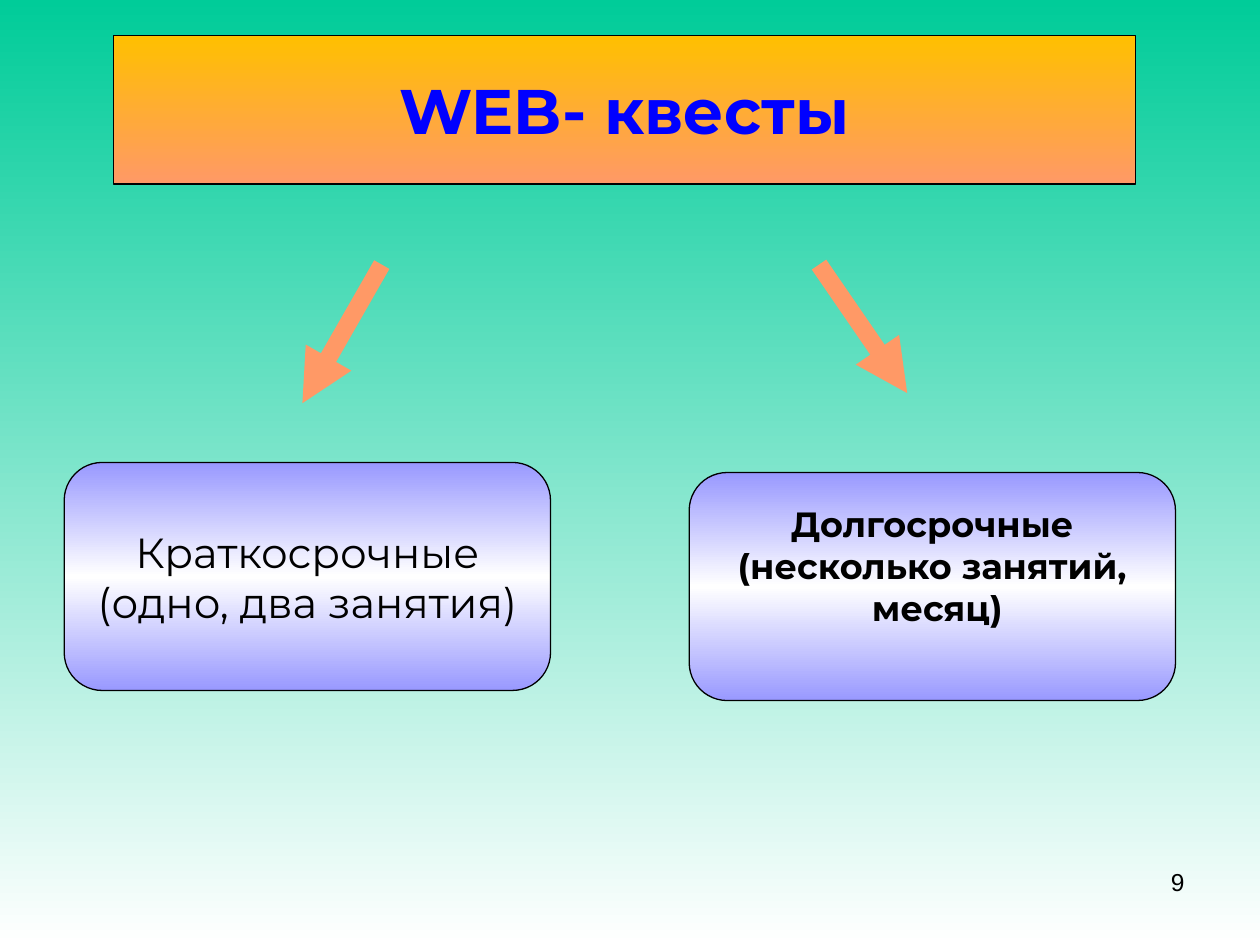
from copy import deepcopy
from dataclasses import dataclass

from pptx import Presentation
from pptx.dml.color import RGBColor
from pptx.enum.shapes import MSO_CONNECTOR, MSO_SHAPE
from pptx.enum.text import MSO_ANCHOR, MSO_AUTO_SIZE, PP_ALIGN
from pptx.oxml.ns import qn
from pptx.oxml.xmlchemy import OxmlElement
from pptx.util import Inches, Pt

# Content
TITLE = "WEB- квесты"
PAGE = "9"
QUESTS = [
    dict(lines=["Краткосрочные", "(одно, два занятия)"],
         at=(0.51, 3.67), size=24, bold=False, lift=0,
         arrow=(3.03, 2.1, 2.4, 3.2)),
    dict(lines=["Долгосрочные", "(несколько занятий,", " месяц)"],
         at=(5.47, 3.75), size=20, bold=True, lift=0.34,
         arrow=(6.5, 2.1, 7.2, 3.12)),
]
TITLE_BOX = (0.9, 0.28, 8.11, 1.18)
QUEST_SIZE = (3.86, 1.81)
PAGE_BOX = (7.17, 6.83, 2.33, 0.52)


@dataclass(frozen=True)
class Theme:
    font: str = "Montserrat"
    page_font: str = "Arial"
    background: tuple = ("00CC99", "FFFFFF")
    title_fill: tuple = ("FFC000", "FF9966")
    quest_fill: tuple = ("9999FF", "FFFFFF", "9999FF")
    title_ink: str = "0000FF"
    ink: str = "000000"
    arrow: str = "FF9966"
    title_size: int = 36
    page_size: int = 14
    outline: float = 0.75
    arrow_width: int = 10


T = Theme()


def rgb(value):
    return RGBColor.from_string(value)


def fill_gradient(fill, colors, element=None):
    """Vertical gradient with evenly spaced stops."""
    fill.gradient()
    fill.gradient_angle = 270
    if len(colors) > 2:
        stops = next(element.iter(qn("a:gsLst")))
        for _ in colors[2:]:
            stops.append(deepcopy(stops[0]))
    for i, (stop, color) in enumerate(zip(fill.gradient_stops, colors)):
        stop.position = i / (len(colors) - 1)
        stop.color.rgb = rgb(color)


def write(sp, lines, font, size, color, bold=False, align=PP_ALIGN.CENTER,
          anchor=MSO_ANCHOR.MIDDLE, wrap=False):
    tf = sp.text_frame
    tf.text = "\n".join(lines)
    tf.word_wrap = wrap
    tf.auto_size = MSO_AUTO_SIZE.NONE
    tf.vertical_anchor = anchor
    for p in tf.paragraphs:
        p.alignment = align
        for r in p.runs:
            r.font.name, r.font.size, r.font.bold = font, Pt(size), bold
            r.font.color.rgb = rgb(color)


def style_box(sp, colors):
    fill_gradient(sp.fill, colors, sp.element)
    sp.line.color.rgb = rgb(T.ink)
    sp.line.width = Pt(T.outline)


def add_arrow(s, ends):
    c = s.shapes.add_connector(MSO_CONNECTOR.STRAIGHT, *map(Inches, ends))
    c.line.color.rgb = rgb(T.arrow)
    c.line.width = Pt(T.arrow_width)
    tail = OxmlElement("a:tailEnd")
    tail.set("type", "triangle")
    c.line._get_or_add_ln().append(tail)
    c.element.spPr.append(OxmlElement("a:effectLst"))


def add_title(s):
    sp = s.shapes.title
    sp.left, sp.top, sp.width, sp.height = map(Inches, TITLE_BOX)
    geom = OxmlElement("a:prstGeom")
    geom.set("prst", "flowChartAlternateProcess")
    geom.append(OxmlElement("a:avLst"))
    sp.element.spPr.find(qn("a:xfrm")).addnext(geom)
    style_box(sp, T.title_fill)
    write(sp, [TITLE], T.font, T.title_size, T.title_ink, bold=True)


def add_quest(s, quest):
    sp = s.shapes.add_shape(MSO_SHAPE.FLOWCHART_ALTERNATE_PROCESS,
                            *map(Inches, quest["at"] + QUEST_SIZE))
    sp.shadow.inherit = False
    style_box(sp, T.quest_fill)
    write(sp, quest["lines"], T.font, quest["size"], T.ink, quest["bold"])
    sp.text_frame.margin_bottom = Inches(0.05 + quest["lift"])


def main():
    prs = Presentation()
    prs.slide_width, prs.slide_height = Inches(10), Inches(7.5)
    s = prs.slides.add_slide(prs.slide_layouts[5])
    fill_gradient(s.background.fill, T.background)

    # Title, then one arrow and box per kind of quest
    add_title(s)
    for quest in QUESTS:
        add_arrow(s, quest["arrow"])
        add_quest(s, quest)

    # Page number
    page = s.shapes.add_textbox(*map(Inches, PAGE_BOX))
    write(page, [PAGE], T.page_font, T.page_size, T.ink,
          align=PP_ALIGN.RIGHT, anchor=MSO_ANCHOR.TOP, wrap=True)

    prs.save("out.pptx")


if __name__ == "__main__":
    main()
